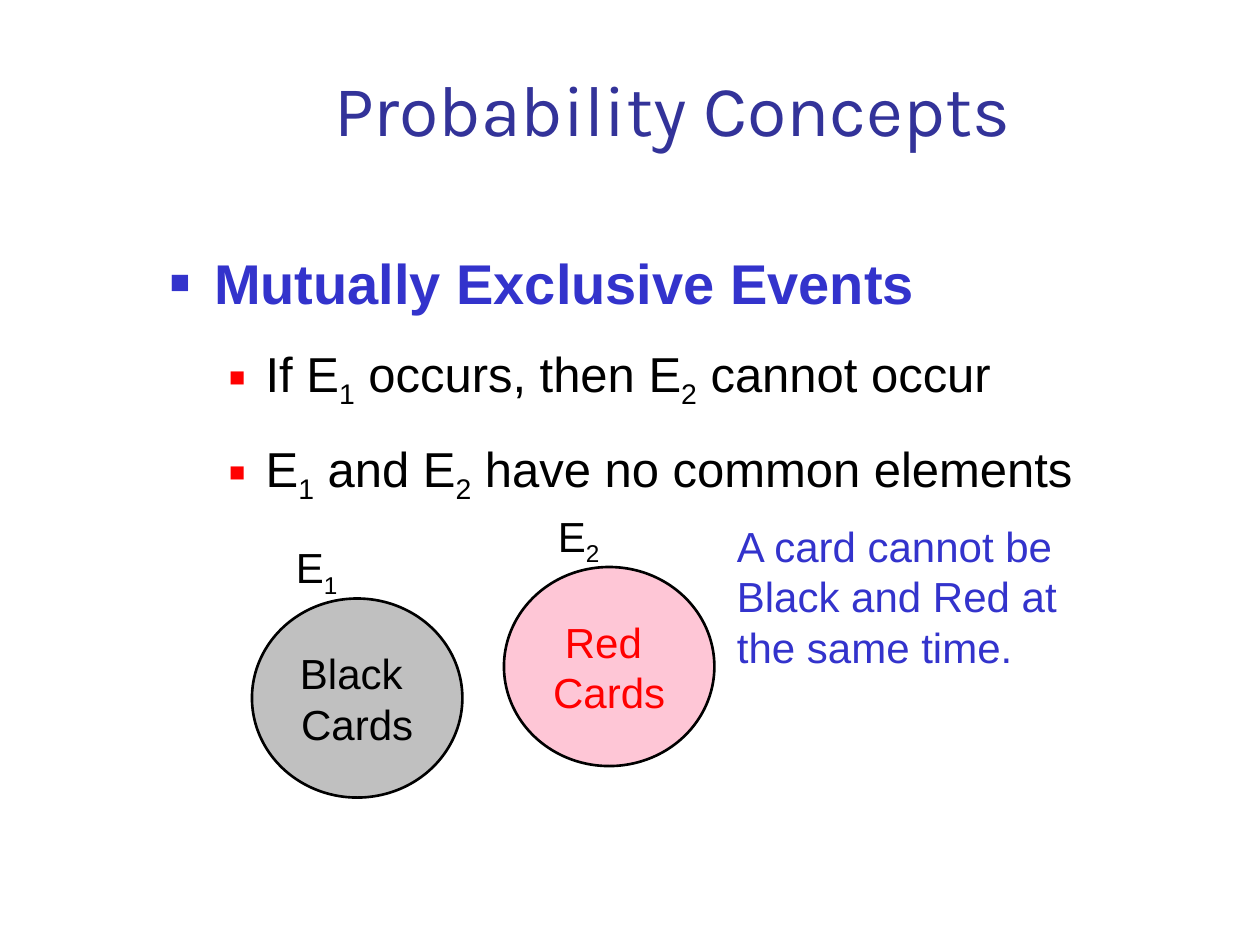
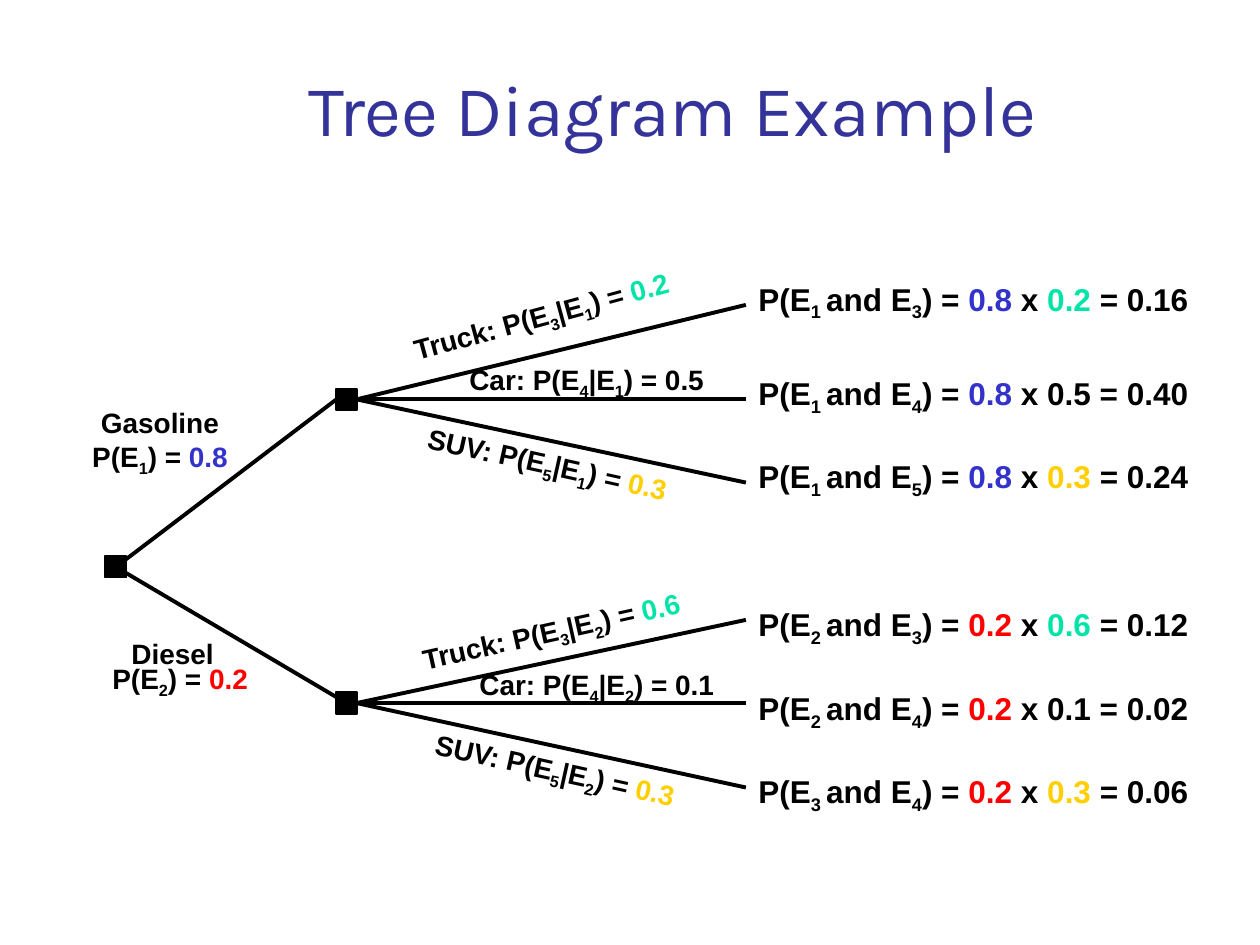
from lxml import etree
from pptx import Presentation
from pptx.dml.color import RGBColor
from pptx.enum import shapes, text
from pptx.oxml.ns import qn
from pptx.util import Inches, Pt

# Shared style
PALETTE = {"navy": "333399", "blue": "3333CC", "red": "FF0000", "black": "000000",
           "green": "00E4A8", "gold": "FFCF01", "gray": "C0C0C0", "pink": "FEC6D6"}
BODY_FONT, TITLE_FONT = "Arial", "Karla"
TITLE_BOX = (1.08, 0.42, 8.52, 0.83)

# Markup: "~" separates runs, "_x" is a subscript, "colour:x" is a coloured run
# Content of slide 1
CONCEPTS_TITLE = "Probability Concepts"
CONCEPTS = [  # text, size, colour, bold, indent, hanging, line spacing, bullet colour, bullet %
    ("Mutually Exclusive Events", 32, "blue", True, 0.35, 0.35, 1.0, "blue", 60),
    ("If E~_1~ occurs, then E~_2~ cannot occur", 28, "black", False, 0.76, 0.29, 1.2, "red", 55),
    ("E~_1~ and E~_2~ have no common elements", 28, "black", False, 0.76, 0.29, 1.2, "red", 55),
]
EVENTS = [  # lines, left, top, fill, text colour, label, label place
    (("Black ", "Cards"), 2, 4.75, "gray", "black", "E~_1", (2.25, 4.25)),
    (("Red ", "Cards"), 4, 4.5, "pink", "red", "E~_2", (4.33, 4)),
]
CARD_NOTE = "A card cannot be Black and Red at the same time."

# Content of slide 2
TREE_TITLE = "Tree Diagram Example"
ROOT = (0.92, 4.5)
FUELS = [
    dict(event=1, share="blue:0.8", node_y=3.17, root_end=(2.67, 3.17), vehicles=[
        # name, event, chance, label box, angle, line end, product top, product events, result
        ("Truck", 3, "green:0.2", (3, 2.33, 2.53), 344.8, 2.42, 2.17, (1, 3), "0.16"),
        ("Car", 4, "0.5", (3.5, 2.83, 2.25), 0, 3.17, 2.92, (1, 4), "0.40"),
        ("SUV", 5, "gold:0.3", (3.11, 3.49, 2.41), 12.5, 3.83, 3.58, (1, 5), "0.24")]),
    dict(event=2, share="red:0.2", node_y=5.58, root_end=(2.75, 5.58), vehicles=[
        ("Truck", 3, "green:0.6", (3.08, 4.83, 2.53), 347.5, 4.92, 4.75, (2, 3), "0.12"),
        ("Car", 4, "0.1", (3.58, 5.25, 2.25), 0, 5.58, 5.42, (2, 4), "0.02"),
        ("SUV", 5, "gold:0.3", (3.17, 5.92, 2.41), 12.5, 6.25, 6.08, (3, 4), "0.06")]),
]
BRANCH_X, LEAF_X, NODE = 2.83, 5.92, 0.17


def color(hex_string):
    return RGBColor.from_string(hex_string)


def fill_paragraph(paragraph, markup, size, tint="black", bold=False, font=BODY_FONT, align=None):
    paragraph.alignment = align
    style = paragraph.font
    style.name, style.size, style.bold = font, Pt(size), bold
    style.color.rgb = color(PALETTE[tint])
    for part in filter(None, markup.split("~")):
        run = paragraph.add_run()
        prefix, _, rest = part.partition(":")
        if part.startswith("_"):
            run.text = part[1:]
            run.font._element.set("baseline", "-25000")
        elif prefix in PALETTE:
            run.text = rest
            run.font.color.rgb = color(PALETTE[prefix])
        else:
            run.text = part


def add_text(slide, box, lines, size, wrap=True, anchor=text.MSO_ANCHOR.TOP, **style):
    shape = slide.shapes.add_textbox(*map(Inches, box))
    frame = shape.text_frame
    frame.word_wrap, frame.vertical_anchor = wrap, anchor
    fill_lines(frame, lines, size, **style)
    return shape


def fill_lines(frame, lines, size, **style):
    for i, line in enumerate(lines):
        paragraph = frame.add_paragraph() if i else frame.paragraphs[0]
        fill_paragraph(paragraph, line, size, **style)


def add_solid(slide, kind, box, fill, line_width):
    shape = slide.shapes.add_shape(kind, *map(Inches, box))
    shape.shadow.inherit = False
    shape.fill.solid()
    shape.fill.fore_color.rgb = color(PALETTE[fill])
    shape.line.color.rgb = color(PALETTE["black"])
    shape.line.width = Pt(line_width)
    return shape


def add_branch(slide, start, end):
    line = slide.shapes.add_connector(shapes.MSO_CONNECTOR.STRAIGHT, *map(Inches, start + end))
    line.line.color.rgb = color(PALETTE["black"])
    line.line.width = Pt(2.25)
    etree.SubElement(line._element.spPr, qn("a:effectLst"))


def add_node(slide, x, y):
    add_solid(slide, shapes.MSO_SHAPE.RECTANGLE, (x - NODE / 2, y - NODE / 2, NODE, NODE), "black", 1)


def add_bullet(paragraph, tint, percent, indent, hanging):
    props = paragraph._p.get_or_add_pPr()
    props.set("marL", str(Inches(indent)))
    props.set("indent", str(-Inches(hanging)))
    bullet_color = etree.SubElement(props, qn("a:buClr"))
    etree.SubElement(bullet_color, qn("a:srgbClr"), val=PALETTE[tint])
    etree.SubElement(props, qn("a:buSzPct"), val=str(percent * 1000))
    etree.SubElement(props, qn("a:buFont"), typeface=BODY_FONT)
    etree.SubElement(props, qn("a:buChar"), char="■")


def new_slide(deck, title):
    slide = deck.slides.add_slide(deck.slide_layouts[6])
    add_text(slide, TITLE_BOX, [title], 41, anchor=text.MSO_ANCHOR.BOTTOM,
             tint="navy", font=TITLE_FONT, align=text.PP_ALIGN.CENTER)
    return slide


def build_concepts(deck):
    slide = new_slide(deck, CONCEPTS_TITLE)

    # Bulleted statements
    frame = slide.shapes.add_textbox(*map(Inches, (1.25, 1.92, 8.08, 4.5))).text_frame
    frame.word_wrap = True
    for i, (words, size, tint, bold, indent, hanging, spacing, mark, percent) in enumerate(CONCEPTS):
        paragraph = frame.add_paragraph() if i else frame.paragraphs[0]
        add_bullet(paragraph, mark, percent, indent, hanging)
        paragraph.line_spacing = spacing
        if i:
            paragraph.space_before = Pt(8.5)
        fill_paragraph(paragraph, words, size, tint, bold)

    # Two separate events
    for lines, left, top, fill, tint, label, place in EVENTS:
        circle = add_solid(slide, shapes.MSO_SHAPE.OVAL, (left, top, 1.67, 1.58), fill, 1.5)
        circle.text_frame.word_wrap = False
        circle.text_frame.vertical_anchor = text.MSO_ANCHOR.MIDDLE
        fill_lines(circle.text_frame, lines, 24, tint=tint, align=text.PP_ALIGN.CENTER)
        add_text(slide, place + (0.55, 0.5), [label], 24, wrap=False)
    add_text(slide, (5.75, 4.08, 2.92, 1.3), [CARD_NOTE], 24, tint="blue")


def build_tree(deck):
    slide = new_slide(deck, TREE_TITLE)
    center = dict(bold=True, align=text.PP_ALIGN.CENTER)

    # Nodes, branches, branch labels and joint probabilities
    add_node(slide, *ROOT)
    for fuel in FUELS:
        event, share, y = fuel["event"], fuel["share"], fuel["node_y"]
        add_branch(slide, ROOT, fuel["root_end"])
        add_node(slide, 2.75, y)
        for name, given, chance, box, angle, end_y, top, pair, result in fuel["vehicles"]:
            add_branch(slide, (BRANCH_X, y), (LEAF_X, end_y))
            label = f" {name}: P(E~_{given}~|E~_{event}~) = ~{chance}"
            add_text(slide, box + (0.37,), [label], 16, **center).rotation = angle
            product = f"P(E~_{pair[0]} ~and E~_{pair[1]}~) = ~{share}~ x ~{chance}~ = {result}"
            add_text(slide, (LEAF_X, top, 3.92, 0.4), [product], 18, bold=True)

    # Fuel labels, each nudged sideways by a margin
    gasoline = add_text(slide, (0.58, 3.17, 1.5, 0.64),
                        ["Gasoline", "P(E~_1~) = ~blue:0.8"], 16, **center)
    gasoline.text_frame.paragraphs[0]._p.get_or_add_pPr().set("marR", str(Inches(0.12)))
    diesel = add_text(slide, (0.58, 5, 1.58, 0.58),
                      ["Diesel", "P(E~_2~) = ~red:0.2"], 16, **center)
    share_line = diesel.text_frame.paragraphs[1]
    share_line.line_spacing = Pt(17)
    share_line._p.get_or_add_pPr().set("marL", str(Inches(0.12)))


def main():
    deck = Presentation()
    deck.slide_width, deck.slide_height = Inches(10), Inches(7.5)
    build_concepts(deck)
    build_tree(deck)
    deck.save("out.pptx")


if __name__ == "__main__":
    main()
